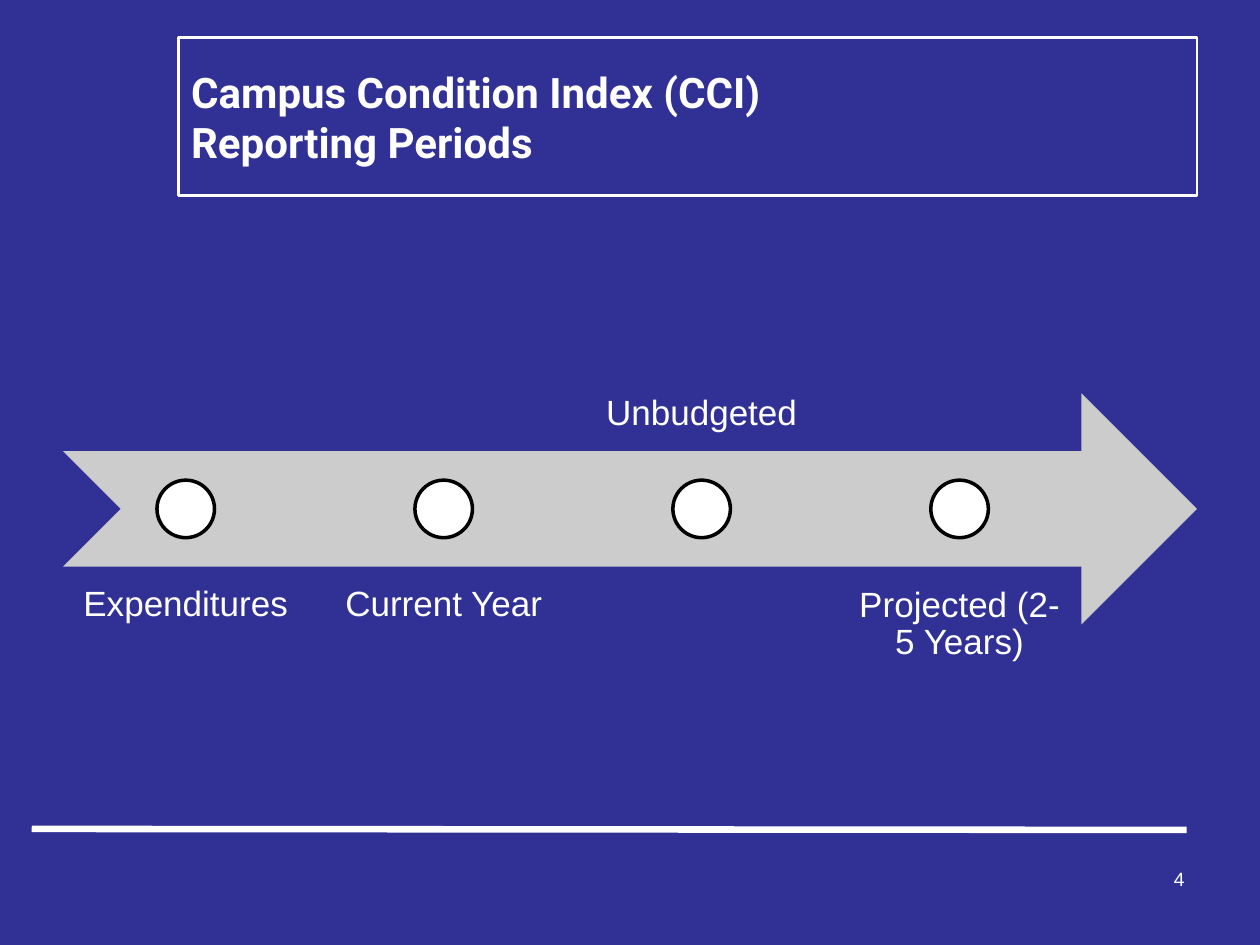
from pptx import Presentation
from pptx.dml.color import RGBColor
from pptx.enum.shapes import MSO_CONNECTOR, MSO_SHAPE
from pptx.enum.text import MSO_ANCHOR, PP_ALIGN
from pptx.oxml.ns import qn
from pptx.util import Cm, Pt
from lxml.etree import SubElement

COLORS = {
    "background": "313195",
    "white": "FFFFFF",
    "arrow": "CCCCCC",
    "outline": "000000",
}


class TimelineSlide:
    body_font = "Arial"
    title_font = "Roboto"

    def __init__(self, deck):
        self.slide = deck.slides.add_slide(deck.slide_layouts[5])
        fill = self.slide.background.fill
        fill.solid()
        fill.fore_color.rgb = self.color("background")

    def color(self, name):
        return RGBColor.from_string(COLORS[name])

    def style_font(self, paragraph, name, size, bold=False):
        font = paragraph.font
        font.name, font.size, font.bold = name, Pt(size), bold
        font.color.rgb = self.color("white")

    def title(self, text, left, top, width, height):
        heading = self.slide.shapes.title
        heading.left, heading.top = Cm(left), Cm(top)
        heading.width, heading.height = Cm(width), Cm(height)
        heading.line.color.rgb = self.color("white")
        heading.line.width = Pt(1.5)
        frame = heading.text_frame
        frame.text = text
        frame.word_wrap = True
        frame.vertical_anchor = MSO_ANCHOR.MIDDLE
        paragraph = frame.paragraphs[0]
        paragraph.alignment = PP_ALIGN.LEFT
        self.style_font(paragraph, self.title_font, 24, bold=True)

    def rule(self, x1, y1, x2, y2):
        footer_rule = self.slide.shapes.add_connector(
            MSO_CONNECTOR.STRAIGHT, Cm(x1), Cm(y1), Cm(x2), Cm(y2))
        footer_rule.line.color.rgb = self.color("white")
        footer_rule.line.width = Pt(3.75)
        SubElement(footer_rule._element.spPr, qn("a:effectLst"))

    def shape(self, preset, left, top, width, height, fill, outline=None):
        figure = self.slide.shapes.add_shape(
            preset, Cm(left), Cm(top), Cm(width), Cm(height))
        figure.shadow.inherit = False
        figure.fill.solid()
        figure.fill.fore_color.rgb = self.color(fill)
        if outline:
            figure.line.color.rgb = self.color(outline)
            figure.line.width = Pt(2)
        else:
            figure.line.fill.background()

    def text(self, text, left, top, width, height, size, align,
             anchor=MSO_ANCHOR.TOP, inset=None, spacing=None):
        frame = self.slide.shapes.add_textbox(
            Cm(left), Cm(top), Cm(width), Cm(height)).text_frame
        frame.text = text
        frame.word_wrap = True
        frame.vertical_anchor = anchor
        if inset is not None:
            frame.margin_left = frame.margin_right = Cm(inset)
            frame.margin_top = frame.margin_bottom = Cm(inset)
        paragraph = frame.paragraphs[0]
        paragraph.alignment = align
        paragraph.line_spacing = spacing
        self.style_font(paragraph, self.body_font, size)

    def milestone(self, label, left, above):
        width, height, dot, middle = 4.95, 4.66, 1.16, 10.26
        top, anchor = (4.45, MSO_ANCHOR.BOTTOM) if above else (11.43, MSO_ANCHOR.TOP)
        self.text(label, left, top, width, height, 20, PP_ALIGN.CENTER,
                  anchor, inset=0.4, spacing=0.9)
        self.shape(MSO_SHAPE.OVAL, left + (width - dot) / 2, middle - dot / 2,
                   dot, dot, "white", "outline")


def main():
    deck = Presentation()
    deck.slide_width, deck.slide_height = Cm(25.4), Cm(19.05)
    timeline = TimelineSlide(deck)
    timeline.rule(0.64, 16.71, 23.92, 16.73)
    timeline.title("Campus Condition Index (CCI)\vReporting Periods",
                   3.6, 0.76, 20.53, 3.18)
    timeline.shape(MSO_SHAPE.NOTCHED_RIGHT_ARROW, 1.27, 7.93, 22.86, 4.66, "arrow")

    periods = [
        ("Expenditures", False),
        ("Current Year", False),
        ("Unbudgeted", True),
        ("Projected (2-5 Years)", False),
    ]
    for index, (period, above) in enumerate(periods):
        timeline.milestone(period, 1.27 + index * 5.2, above)

    timeline.text("4", 18.21, 17.35, 5.92, 1.32, 11, PP_ALIGN.RIGHT)
    deck.save("out.pptx")


if __name__ == "__main__":
    main()
